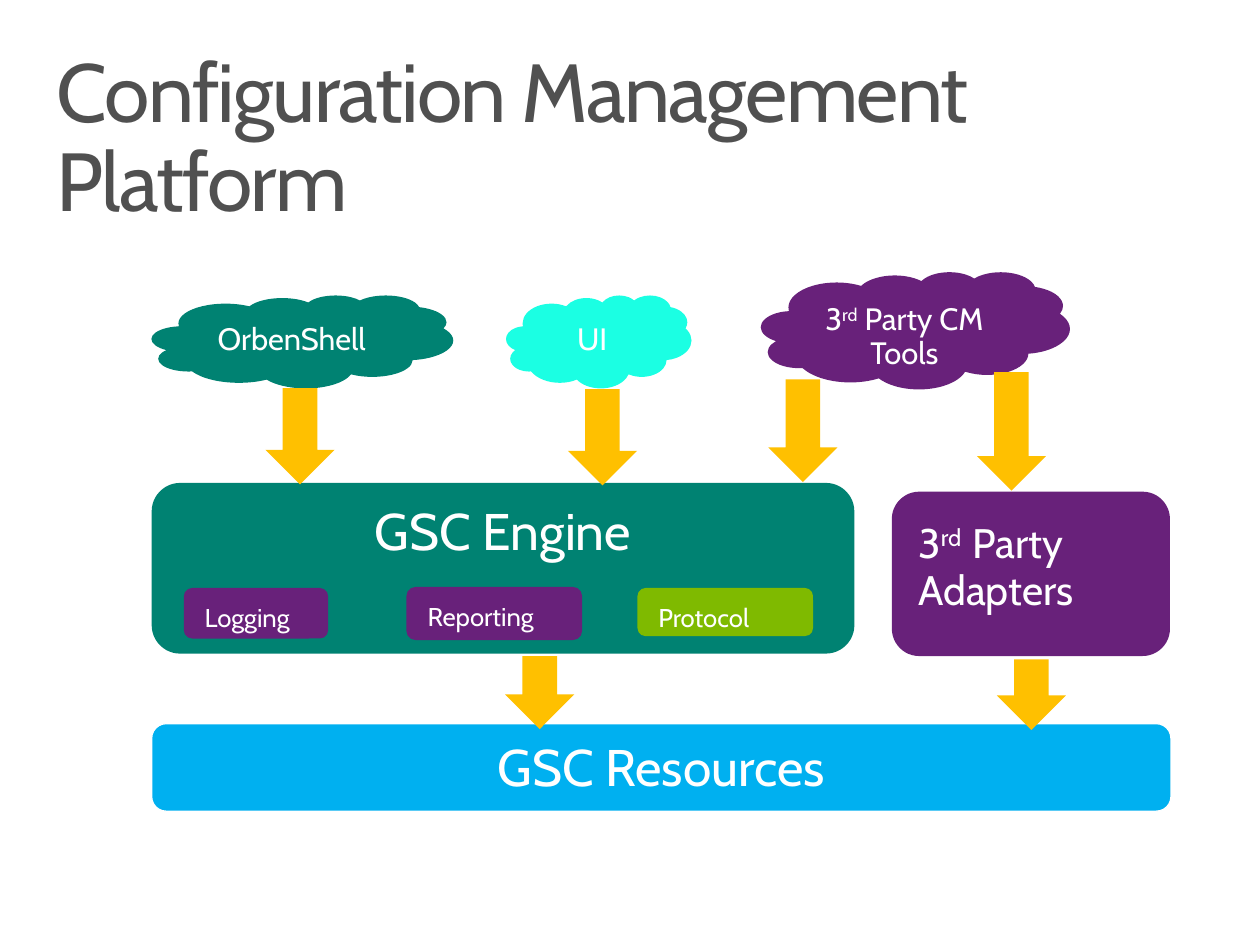
from dataclasses import dataclass
from typing import NamedTuple

from pptx import Presentation
from pptx import util as u
from pptx.dml import color
from pptx.enum import shapes, text
from pptx.shapes import autoshape as auto
from pptx.text import text as body

Kind = shapes.MSO_SHAPE
Side = text.PP_ALIGN


@dataclass(frozen=True)
class Theme:
    font: str = "Cabin"
    gray: str = "505050"
    white: str = "FFFFFF"
    teal: str = "008272"
    plum: str = "68217A"
    aqua: str = "1BFFE3"
    blue: str = "00B0F0"
    green: str = "7FBA00"
    gold: str = "FFC000"
    title: int = 48
    head: int = 30
    sub: int = 24
    label: int = 18
    small: int = 15


T = Theme()


class Bit(NamedTuple):
    words: str
    size: int
    sup: bool = False


class Box(NamedTuple):
    kind: Kind
    left: float
    top: float
    width: float
    height: float
    fill: str
    bits: tuple[Bit, ...]
    align: Side = Side.CENTER
    edge: str = ""


class Arrow(NamedTuple):
    left: float
    top: float
    height: float


BOXES = (
    Box(Kind.ROUNDED_RECTANGLE, 3.12, 9.93, 14.45, 3.51, T.teal,
        (Bit("GSC Engine", T.head),)),
    Box(Kind.CLOUD, 3.12, 6.07, 6.2, 1.91, T.teal,
        (Bit("OrbenShell", T.label),)),
    Box(Kind.CLOUD, 15.65, 5.59, 6.35, 2.41, T.plum,
        (Bit("3", T.label), Bit("rd", T.label, True),
         Bit(" Party CM Tools", T.label))),
    Box(Kind.CLOUD, 10.41, 6.07, 3.81, 1.91, T.aqua,
        (Bit("UI", T.label),)),
    Box(Kind.ROUNDED_RECTANGLE, 3.12, 14.88, 20.96, 1.8, T.blue,
        (Bit("GSC Resources", T.head),), edge=T.white),
    Box(Kind.ROUNDED_RECTANGLE, 18.34, 10.11, 5.72, 3.38, T.plum,
        (Bit("3", T.sub), Bit("rd", T.sub, True), Bit(" ", T.head),
         Bit("Party Adapters", T.sub)), Side.LEFT),
    Box(Kind.ROUNDED_RECTANGLE, 3.78, 12.09, 2.97, 1.04, T.plum,
        (Bit("Logging", T.small),), Side.LEFT),
    Box(Kind.ROUNDED_RECTANGLE, 8.36, 12.07, 3.61, 1.09, T.plum,
        (Bit("Reporting", T.small),), Side.LEFT),
    Box(Kind.ROUNDED_RECTANGLE, 13.11, 12.09, 3.61, 0.99, T.green,
        (Bit("Protocol", T.small),), Side.LEFT),
)

ARROWS = (
    Arrow(5.46, 7.98, 1.98),
    Arrow(11.68, 8, 1.98),
    Arrow(20.09, 7.65, 2.44),
    Arrow(15.8, 7.8, 2.11),
    Arrow(20.5, 13.56, 1.45),
    Arrow(10.39, 13.49, 1.5),
)
SPAN = 1.42


def rgb(code: str) -> color.RGBColor:
    return color.RGBColor.from_string(code)


def write(frame: body.TextFrame, bits: tuple[Bit, ...], ink: str,
          align: Side, side: float, end: float, track: int = 0) -> None:
    frame.word_wrap = True
    frame.vertical_anchor = text.MSO_ANCHOR.TOP
    frame.margin_left = frame.margin_right = u.Cm(side)
    frame.margin_top = frame.margin_bottom = u.Cm(end)
    para = frame.paragraphs[0]
    para.alignment = align
    para.line_spacing = 0.9
    for bit in bits:
        run = para.add_run()
        run.text = bit.words
        font = run.font
        font.name = T.font
        font.size = u.Pt(bit.size)
        font.color.rgb = rgb(ink)
        props = run._r.get_or_add_rPr()
        if bit.sup:
            props.set("baseline", "30000")
        if track:
            props.set("spc", str(track))


def shape(slide, kind: Kind, left: float, top: float, width: float,
          height: float, fill: str, edge: str = "") -> auto.Shape:
    item = slide.shapes.add_shape(
        kind, u.Cm(left), u.Cm(top), u.Cm(width), u.Cm(height))
    item.shadow.inherit = False
    item.fill.solid()
    item.fill.fore_color.rgb = rgb(fill)
    if edge:
        item.line.color.rgb = rgb(edge)
        item.line.width = u.Pt(0.75)
    else:
        item.line.fill.background()
    return item


def main() -> None:
    deck = Presentation()
    deck.slide_width = u.Cm(25.91)
    deck.slide_height = u.Cm(19.43)
    slide = deck.slides.add_slide(deck.slide_layouts[6])

    title = slide.shapes.add_textbox(
        u.Cm(0.76), u.Cm(0.81), u.Cm(24.38), u.Cm(2.54))
    write(title.text_frame, (Bit("Configuration Management Platform", T.title),),
          T.gray, Side.LEFT, 0.41, 0.25, -100)

    for box in BOXES:
        item = shape(slide, box.kind, box.left, box.top, box.width,
                     box.height, box.fill, box.edge)
        write(item.text_frame, box.bits, T.white, box.align, 0.38, 0.3)

    for arrow in ARROWS:
        shape(slide, Kind.DOWN_ARROW, arrow.left, arrow.top, SPAN,
              arrow.height, T.gold)

    deck.save("out.pptx")


if __name__ == "__main__":
    main()
